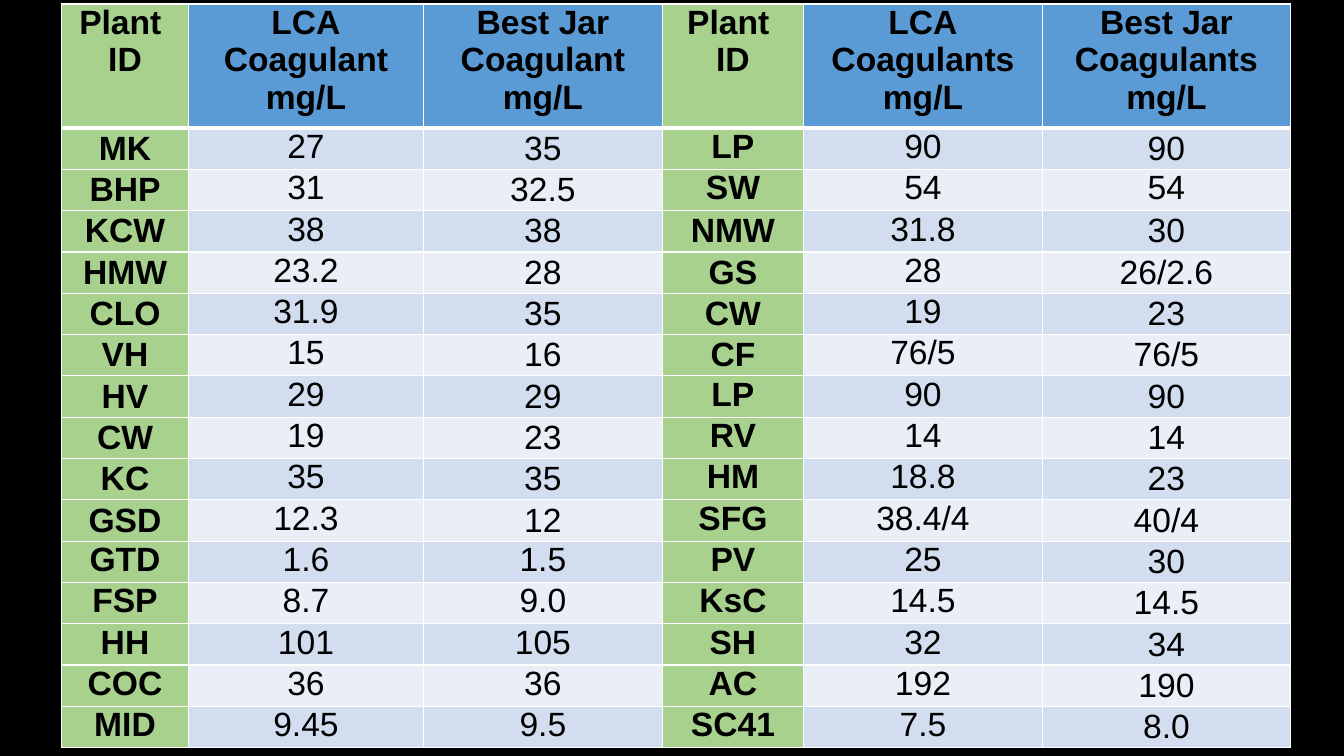
from dataclasses import dataclass

from lxml.etree import SubElement
from pptx import Presentation
from pptx.dml.color import RGBColor
from pptx.enum.text import MSO_ANCHOR as Anchor, PP_ALIGN as Align
from pptx.oxml.ns import qn
from pptx.table import _Cell as Cell
from pptx.util import Inches, Pt

BLACK, WHITE = "000000", "FFFFFF"
GREEN, BLUE = "A9D18E", "5B9BD5"
BANDS = ("EAEFF7", "D2DEEF")


@dataclass(frozen=True)
class Column:
    heading: str
    width: float
    is_plant: bool = False
    middle_rows: tuple[int, ...] = ()  # body rows centred vertically
    inset: float = 0.06


COLUMNS = [
    Column("Plant \nID", 1.26, True, tuple(range(1, 11))),
    Column("LCA\nCoagulant\nmg/L", 2.33),
    Column("Best Jar\nCoagulant\nmg/L", 2.37, False, tuple(range(1, 11))),
    Column("Plant \nID", 1.4, True, (3, 4, 5, 6), 0.07),
    Column("LCA\nCoagulants\nmg/L", 2.37, inset=0.07),
    Column("Best Jar\nCoagulants\nmg/L", 2.46, False, (1, *range(3, 16)), 0.07),
]

DOSES = [
    ("MK", "27", "35", "LP", "90", "90"),
    ("BHP", "31", "32.5", "SW", "54", "54"),
    ("KCW", "38", "38", "NMW", "31.8", "30"),
    ("HMW", "23.2", "28", "GS", "28", "26/2.6"),
    ("CLO", "31.9", "35", "CW", "19", "23"),
    ("VH", "15", "16", "CF", "76/5", "76/5"),
    ("HV", "29", "29", "LP", "90", "90"),
    ("CW", "19", "23", "RV", "14", "14"),
    ("KC", "35", "35", "HM", "18.8", "23"),
    ("GSD", "12.3", "12", "SFG", "38.4/4", "40/4"),
    ("GTD", "1.6", "1.5", "PV", "25", "30"),
    ("FSP", "8.7", "9.0", "KsC", "14.5", "14.5"),
    ("HH", "101", "105", "SH", "32", "34"),
    ("COC", "36", "36", "AC", "192", "190"),
    ("MID", "9.45", "9.5", "SC41", "7.5", "8.0"),
]


def rgb(value: str) -> RGBColor:
    return RGBColor.from_string(value)


def write(cell: Cell, text: str, *, bold: bool = False, size: float = 24,
          color: str = BLACK, font: str = "Arial") -> None:
    cell.text = text
    for paragraph in cell.text_frame.paragraphs:
        paragraph.alignment = Align.CENTER
        for run in paragraph.runs:
            run.font.name, run.font.size, run.font.bold = font, Pt(size), bold
            run.font.color.rgb = rgb(color)


def add_borders(cell: Cell, *, top: float, bottom: float) -> None:
    properties = cell._tc.get_or_add_tcPr()
    for side, points in (("L", 1), ("R", 1), ("T", top), ("B", bottom)):
        line = SubElement(properties, qn(f"a:ln{side}"), w=str(Pt(points)))
        fill = SubElement(line, qn("a:solidFill"))
        SubElement(fill, qn("a:srgbClr"), val=WHITE)


def draw_cell(cell: Cell, text: str, column: Column, row: int) -> None:
    is_header = row == 0
    cell.margin_left = cell.margin_right = Inches(column.inset)
    cell.margin_top = cell.margin_bottom = 0
    cell.vertical_anchor = Anchor.MIDDLE if row in column.middle_rows else Anchor.TOP
    write(cell, text, bold=is_header or column.is_plant)

    # Borders come before the fill in the cell properties
    add_borders(cell, top=3 if row == 1 else 1, bottom=3 if is_header else 1)
    cell.fill.solid()
    shade = GREEN if column.is_plant else BLUE if is_header else BANDS[row % 2]
    cell.fill.fore_color.rgb = rgb(shade)


def main() -> None:
    deck = Presentation()
    deck.slide_width, deck.slide_height = Inches(13.33), Inches(7.5)
    slide = deck.slides.add_slide(deck.slide_layouts[6])
    slide.background.fill.solid()
    slide.background.fill.fore_color.rgb = rgb(BLACK)

    # Table grid
    rows = [tuple(column.heading for column in COLUMNS), *DOSES]
    doses = slide.shapes.add_table(len(rows), len(COLUMNS), Inches(0.61), Inches(0.04),
                                   Inches(12.19), Inches(7.38)).table
    for index, column in enumerate(COLUMNS):
        doses.columns[index].width = Inches(column.width)

    # Headings and doses
    for row, texts in enumerate(rows):
        doses.rows[row].height = Inches(0.41 if row else 1.23)
        for index, (column, text) in enumerate(zip(COLUMNS, texts)):
            draw_cell(doses.cell(row, index), text, column, row)

    deck.save("out.pptx")


if __name__ == "__main__":
    main()
